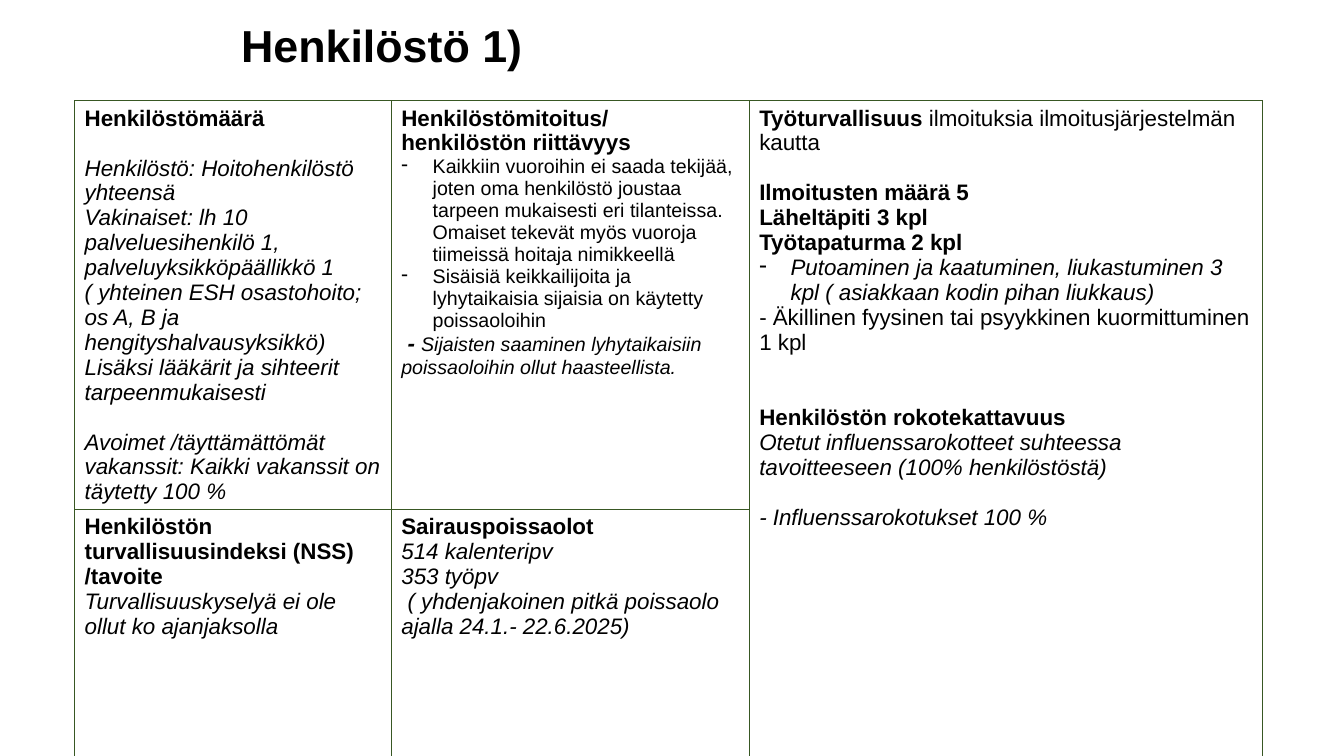
import pptx
import pptx.dml.color
import pptx.enum.text
import pptx.util
from lxml import etree
from pptx.oxml.ns import qn

Cm, Pt = pptx.util.Cm, pptx.util.Pt
BLACK = pptx.dml.color.RGBColor(0x00, 0x00, 0x00)
WHITE = pptx.dml.color.RGBColor(0xFF, 0xFF, 0xFF)
GREEN = pptx.dml.color.RGBColor(0x38, 0x57, 0x23)
BLANK_LINE = 18  # height in points of one line of 16 pt text

BOLD = {"bold": True}
ITALIC = {"italic": True}


def write(tf, text, size=16, bold=False, italic=False, bullet=None, gap=0, same=False):
    """Add text as a new paragraph, or to the last paragraph if same is set."""
    p = tf.paragraphs[-1]
    if p.runs and not same:
        p = tf.add_paragraph()
    if bullet:
        pPr = p._p.get_or_add_pPr()
        pPr.set("marL", str(Cm(0.79)))
        pPr.set("indent", str(-Cm(0.79)))
        etree.SubElement(pPr, qn("a:buChar"), char=bullet)
    if gap:
        p.space_before = Pt(gap)
    r = p.add_run()
    r.text = text
    r.font.name = "Arial"
    r.font.size = Pt(size)
    r.font.bold = bold
    r.font.italic = italic
    r.font.color.rgb = BLACK
    return p


class SlideBuilder:
    def __init__(self, prs, border=GREEN, fill=WHITE):
        self.s = prs.slides.add_slide(prs.slide_layouts[5])
        self.border, self.fill = border, fill

    def title(self, text, left, top, width, height):
        sp = self.s.shapes.title
        sp.left, sp.top, sp.width, sp.height = Cm(left), Cm(top), Cm(width), Cm(height)
        tf = sp.text_frame
        tf.word_wrap = True
        tf.vertical_anchor = pptx.enum.text.MSO_ANCHOR.MIDDLE
        p = write(tf, text, size=32, bold=True)
        p.alignment = pptx.enum.text.PP_ALIGN.LEFT
        p.line_spacing = 0.9

    def table(self, left, top, widths, heights):
        frame = self.s.shapes.add_table(len(heights), len(widths), Cm(left), Cm(top),
                                        Cm(sum(widths)), Cm(sum(heights)))
        table = frame.table
        table.first_row = table.horz_banding = False
        for column, width in zip(table.columns, widths):
            column.width = Cm(width)
        for row, height in zip(table.rows, heights):
            row.height = Cm(height)
            for cell in row.cells:
                self.style_cell(cell)
        return table

    def style_cell(self, cell):
        tcPr = cell._tc.get_or_add_tcPr()
        for side in ("lnL", "lnR", "lnT", "lnB"):
            ln = etree.SubElement(tcPr, qn("a:" + side), w=str(Pt(1)))
            paint = etree.SubElement(ln, qn("a:solidFill"))
            etree.SubElement(paint, qn("a:srgbClr"), val=str(self.border))
        cell.fill.solid()
        cell.fill.fore_color.rgb = self.fill

    def fill_cell(self, cell, paragraphs):
        for text, style in paragraphs:
            write(cell.text_frame, text, **style)


AFTER_BLANK = {"italic": True, "gap": BLANK_LINE}
SMALL_BULLET = {"size": 14, "bullet": "-"}

CELLS = {
    (0, 0): [
        ("Henkilöstömäärä", BOLD),
        ("Henkilöstö: Hoitohenkilöstö yhteensä", AFTER_BLANK),
        ("Vakinaiset: lh 10 palveluesihenkilö 1, palveluyksikköpäällikkö 1 "
         "( yhteinen ESH osastohoito; os A, B ja hengityshalvausyksikkö)", ITALIC),
        ("Lisäksi lääkärit ja sihteerit tarpeenmukaisesti", ITALIC),
        ("Avoimet /täyttämättömät vakanssit: Kaikki vakanssit on täytetty 100 %",
         AFTER_BLANK),
    ],
    (0, 1): [
        ("Henkilöstömitoitus/", BOLD),
        ("henkilöstön riittävyys", BOLD),
        ("Kaikkiin vuoroihin ei saada tekijää, joten oma henkilöstö joustaa tarpeen "
         "mukaisesti eri tilanteissa. Omaiset tekevät myös vuoroja tiimeissä hoitaja "
         "nimikkeellä", SMALL_BULLET),
        ("Sisäisiä keikkailijoita ja lyhytaikaisia sijaisia on käytetty poissaoloihin",
         SMALL_BULLET),
        (" - ", {"bold": True, "italic": True}),
        ("Sijaisten saaminen lyhytaikaisiin poissaoloihin ollut haasteellista.",
         {"size": 14, "italic": True, "same": True}),
    ],
    (0, 2): [
        ("Työturvallisuus ", BOLD),
        ("ilmoituksia ilmoitusjärjestelmän kautta", {"same": True}),
        ("Ilmoitusten määrä 5", {"bold": True, "gap": BLANK_LINE}),
        ("Läheltäpiti 3 kpl", BOLD),
        ("Työtapaturma 2 kpl", BOLD),
        ("Putoaminen ja kaatuminen, liukastuminen 3 kpl ( asiakkaan kodin pihan liukkaus)",
         {"italic": True, "bullet": "-"}),
        ("- Äkillinen fyysinen tai psyykkinen kuormittuminen 1 kpl", {}),
        ("Henkilöstön rokotekattavuus", {"bold": True, "gap": 2 * BLANK_LINE}),
        ("Otetut influenssarokotteet suhteessa tavoitteeseen (100% henkilöstöstä)", ITALIC),
        ("- Influenssarokotukset 100 %", AFTER_BLANK),
    ],
    (1, 0): [
        ("Henkilöstön turvallisuusindeksi (NSS) /tavoite", BOLD),
        ("Turvallisuuskyselyä ei ole ollut ko ajanjaksolla", ITALIC),
    ],
    (1, 1): [
        ("Sairauspoissaolot", BOLD),
        ("514 kalenteripv", ITALIC),
        ("353 työpv", ITALIC),
        (" ( yhdenjakoinen pitkä poissaolo ajalla 24.1.- 22.6.2025)", ITALIC),
    ],
}


def main():
    prs = pptx.Presentation()
    prs.slide_width, prs.slide_height = Cm(33.87), Cm(19.05)
    builder = SlideBuilder(prs)
    builder.title("Henkilöstö 1)", 5.82, 0.38, 23.57, 1.65)
    table = builder.table(1.88, 2.54, widths=[7.98, 9.02, 12.93], heights=[6.83, 9.02])
    table.cell(0, 2).merge(table.cell(1, 2))
    for (row, column), paragraphs in CELLS.items():
        builder.fill_cell(table.cell(row, column), paragraphs)
    prs.save("out.pptx")


if __name__ == "__main__":
    main()
